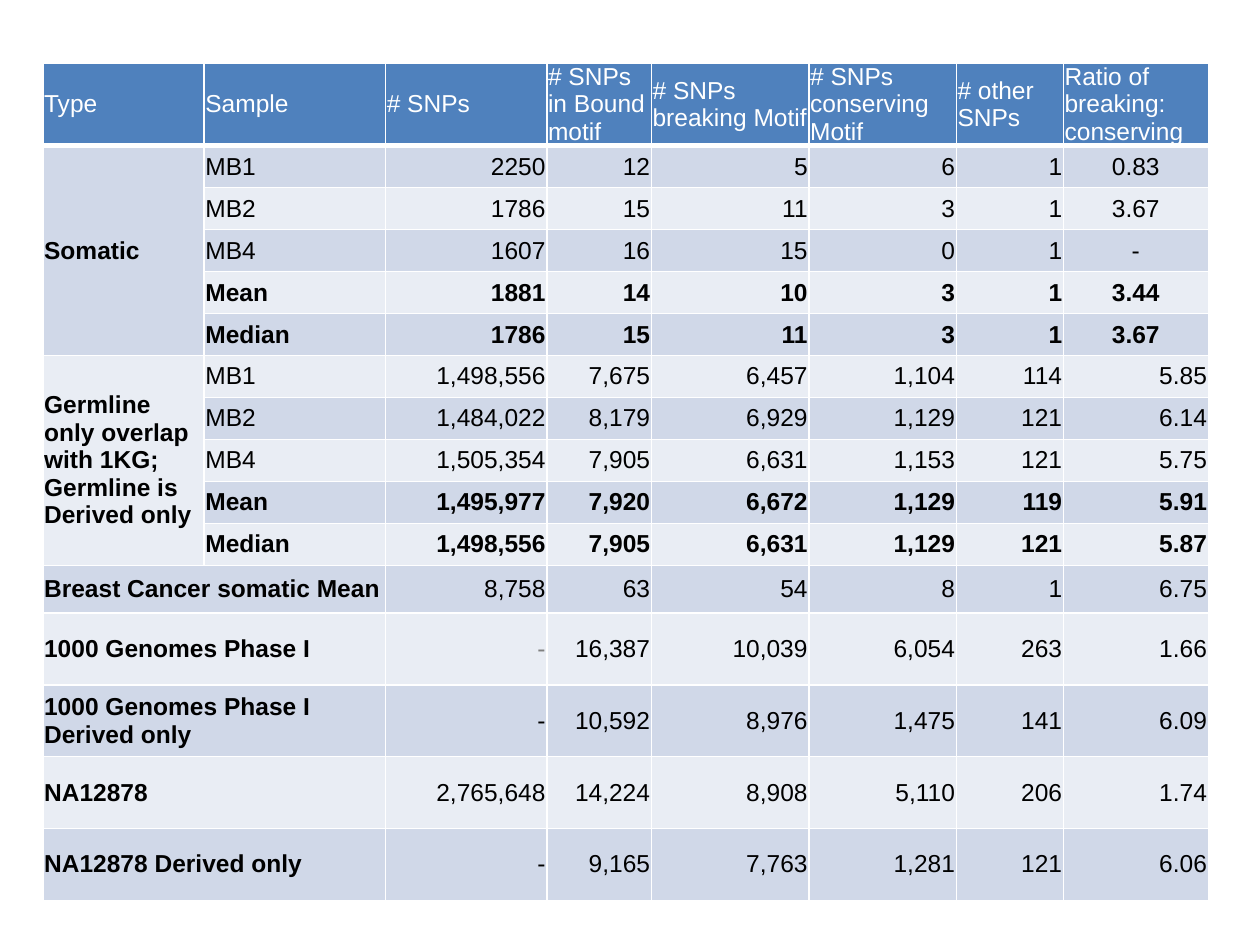
from dataclasses import dataclass

from lxml.etree import SubElement
from pptx import Presentation
from pptx.dml.color import RGBColor
from pptx.enum.text import MSO_ANCHOR, PP_ALIGN
from pptx.oxml.ns import qn
from pptx.util import Inches, Pt


@dataclass(frozen=True)
class Theme:
    font: str = "Arial"
    size: int = 14
    header: str = "4F81BD"
    dark_band: str = "D0D8E8"
    light_band: str = "E9EDF4"
    rule: str = "FFFFFF"
    header_text: str = "FFFFFF"
    text: str = "000000"
    muted: str = "808080"
    thin: int = 1
    thick: int = 3


theme = Theme()


def set_borders(cell, top, bottom):
    properties = cell._tc.get_or_add_tcPr()
    widths = {"lnL": theme.thin, "lnR": theme.thin, "lnT": top, "lnB": bottom}
    for side, width in widths.items():
        line = SubElement(properties, qn(f"a:{side}"), w=str(Pt(width)))
        fill = SubElement(line, qn("a:solidFill"))
        SubElement(fill, qn("a:srgbClr"), val=theme.rule)


def write_cell(cell, text, align, color, bold):
    cell.text = text
    for paragraph in cell.text_frame.paragraphs:
        paragraph.alignment = align
        paragraph.font.name = theme.font
        paragraph.font.size = Pt(theme.size)
        paragraph.font.bold = bold
        paragraph.font.color.rgb = RGBColor.from_string(color)


# Content: type, sample, then the counts and the ratio
snp_rows = [
    ["Type", "Sample", "# SNPs", "# SNPs in Bound motif", "# SNPs breaking Motif",
     "# SNPs conserving Motif", "# other SNPs", "Ratio of breaking:\nconserving"],
    ["Somatic", "MB1", "2250", "12", "5", "6", "1", "0.83"],
    ["", "MB2", "1786", "15", "11", "3", "1", "3.67"],
    ["", "MB4", "1607", "16", "15", "0", "1", "-"],
    ["", "Mean", "1881", "14", "10", "3", "1", "3.44"],
    ["", "Median", "1786", "15", "11", "3", "1", "3.67"],
    ["Germline\nonly overlap with 1KG; Germline is Derived only",
     "MB1", "1,498,556", "7,675", "6,457", "1,104", "114", "5.85"],
    ["", "MB2", "1,484,022", "8,179", "6,929", "1,129", "121", "6.14"],
    ["", "MB4", "1,505,354", "7,905", "6,631", "1,153", "121", "5.75"],
    ["", "Mean", "1,495,977", "7,920", "6,672", "1,129", "119", "5.91"],
    ["", "Median", "1,498,556", "7,905", "6,631", "1,129", "121", "5.87"],
    ["Breast Cancer somatic Mean", "", "8,758", "63", "54", "8", "1", "6.75"],
    ["1000 Genomes Phase I", "", "-", "16,387", "10,039", "6,054", "263", "1.66"],
    ["1000 Genomes Phase I\nDerived only", "", "-", "10,592", "8,976", "1,475", "141", "6.09"],
    ["NA12878", "", "2,765,648", "14,224", "8,908", "5,110", "206", "1.74"],
    ["NA12878 Derived only", "", "-", "9,165", "7,763", "1,281", "121", "6.06"],
]
column_widths = [1.28, 1.44, 1.28, 0.83, 1.25, 1.17, 0.85, 1.15]
row_heights = [0.64] + [1 / 3] * 10 + [0.38] + [0.57] * 4
somatic_rows = range(1, 6)
first_summary_row = 11
muted_cell = (12, 2)

# Slide
deck = Presentation()
deck.slide_width, deck.slide_height = Inches(10), Inches(7.5)
slide = deck.slides.add_slide(deck.slide_layouts[6])

# Table grid
snp_table = slide.shapes.add_table(
    len(snp_rows), len(column_widths), Inches(0.34), Inches(0.5),
    Inches(sum(column_widths)), Inches(sum(row_heights))).table
for column, width in zip(snp_table.columns, column_widths):
    column.width = Inches(width)
for row, height in zip(snp_table.rows, row_heights):
    row.height = Inches(height)

# Merged labels: two sample groups, then the summary rows
for first in (1, 6):
    snp_table.cell(first, 0).merge(snp_table.cell(first + 4, 0))
for r in range(first_summary_row, len(snp_rows)):
    snp_table.cell(r, 0).merge(snp_table.cell(r, 1))

# Cells
for r, values in enumerate(snp_rows):
    band = theme.header if r == 0 else theme.dark_band if r % 2 else theme.light_band
    for c, value in enumerate(values):
        cell = snp_table.cell(r, c)
        cell.margin_left = cell.margin_right = Inches(0.01)
        cell.margin_top = cell.margin_bottom = 0
        cell.vertical_anchor = MSO_ANCHOR.MIDDLE
        set_borders(cell, top=theme.thick if r == 1 else theme.thin,
                    bottom=theme.thick if r == 0 else theme.thin)
        cell.fill.solid()
        cell.fill.fore_color.rgb = RGBColor.from_string(band)
        if cell.is_spanned:
            continue

        if r == 0 or c < 2:
            align = PP_ALIGN.LEFT
        elif c == 7 and r in somatic_rows:
            align = PP_ALIGN.CENTER
        else:
            align = PP_ALIGN.RIGHT
        if r == 0:
            color = theme.header_text
        else:
            color = theme.muted if (r, c) == muted_cell else theme.text
        bold = r > 0 and (c == 0 or values[1] in ("Mean", "Median"))
        write_cell(cell, value, align, color, bold)

deck.save("out.pptx")
